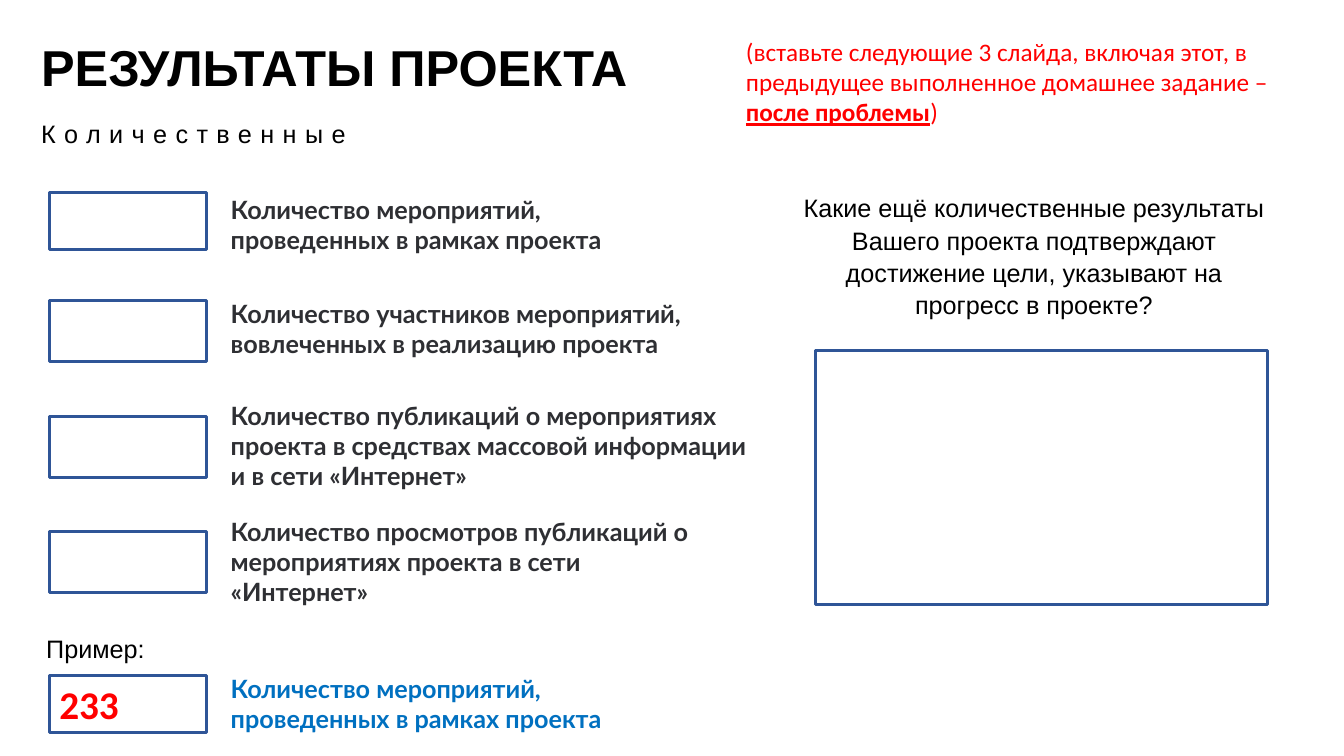
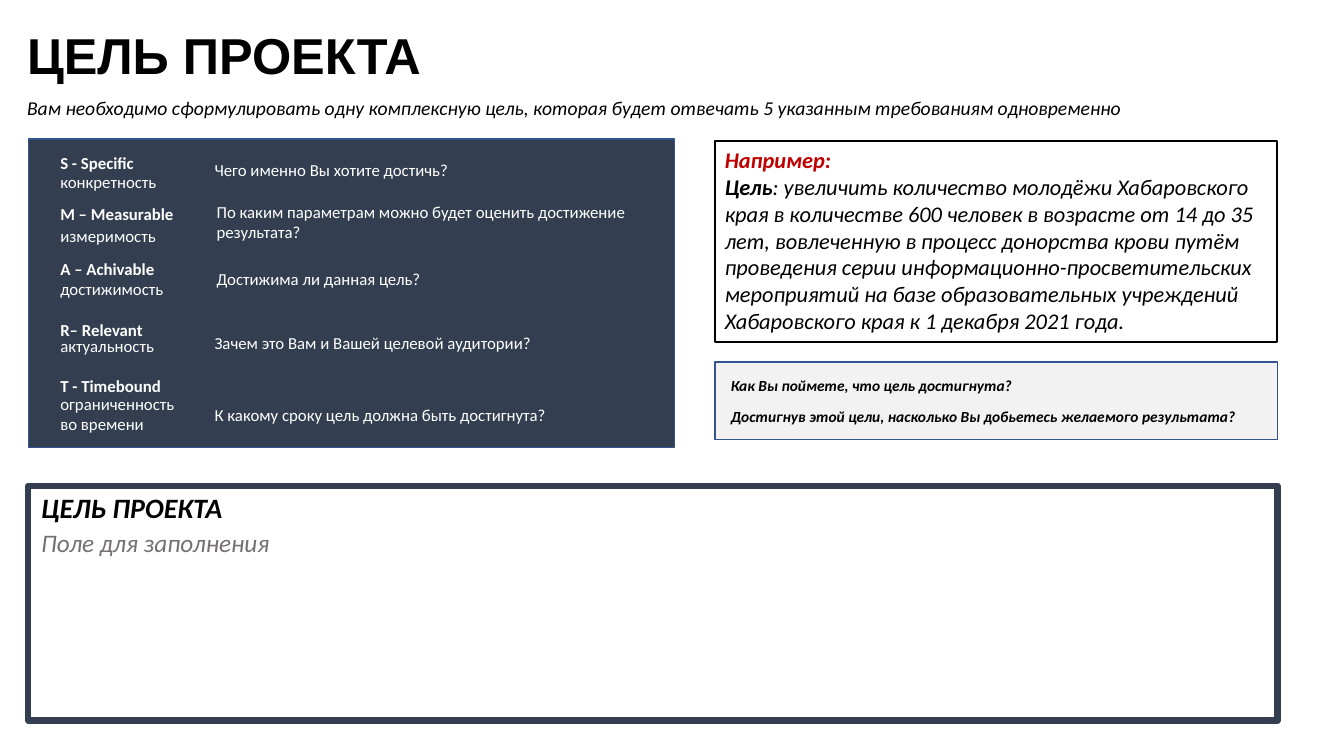
from dataclasses import dataclass
from typing import Any, NamedTuple, Optional

from pptx import Presentation
from pptx.dml.color import RGBColor
from pptx.enum.shapes import MSO_SHAPE
from pptx.enum.text import MSO_ANCHOR, PP_ALIGN
from pptx.util import Inches, Pt

RECTANGLE = MSO_SHAPE.RECTANGLE
TOP = MSO_ANCHOR.TOP
LEFT = PP_ALIGN.LEFT
CENTER = PP_ALIGN.CENTER

BLACK = RGBColor(0x00, 0x00, 0x00)
WHITE = RGBColor(0xFF, 0xFF, 0xFF)
RED = RGBColor(0xFF, 0x00, 0x00)
DARK_RED = RGBColor(0xC0, 0x00, 0x00)
CHARCOAL = RGBColor(0x2E, 0x2F, 0x33)
SKY_BLUE = RGBColor(0x00, 0x70, 0xC0)
FIELD_BLUE = RGBColor(0x2F, 0x55, 0x97)
PANEL_BLUE = RGBColor(0x32, 0x54, 0x91)
SLATE = RGBColor(0x33, 0x3F, 0x50)
PALE_GRAY = RGBColor(0xF2, 0xF2, 0xF2)
HINT_GRAY = RGBColor(0x76, 0x71, 0x71)


class Box(NamedTuple):
    left: float
    top: float
    width: float
    height: float


@dataclass(frozen=True)
class Style:
    size: float
    font: str
    color: RGBColor
    bold: bool = False
    italic: bool = False
    underline: bool = False
    tracking: int = 0


class Span(NamedTuple):
    text: str
    style: Style


Lines = list[list[Span]]


class Indicator(NamedTuple):
    text: str
    text_box: Box
    field_top: float
    field_height: float


class Criterion(NamedTuple):
    term: str
    term_top: float
    meaning: str
    meaning_top: float
    question: str
    question_left: float
    question_top: float


TITLE = Style(36, "Arial", BLACK, bold=True)
BODY = Style(18, "Arial", BLACK)
TRACKED = Style(18, "Arial", BLACK, tracking=6)
INDICATOR = Style(18, "Lato", CHARCOAL, bold=True)
INDICATOR_EXAMPLE = Style(18, "Lato", SKY_BLUE, bold=True)
NUMBER_EXAMPLE = Style(28, "Calibri", RED, bold=True)
NOTE = Style(18, "Calibri", RED)
NOTE_STRONG = Style(18, "Calibri", RED, bold=True, underline=True)
LEAD = Style(14, "Calibri", BLACK, italic=True)
TERM = Style(12, "Calibri", WHITE, bold=True)
CRITERION = Style(12, "Calibri", WHITE)
CHECK = Style(11, "Calibri", BLACK, bold=True, italic=True)
SAMPLE = Style(16, "Calibri", BLACK, italic=True)
SAMPLE_STRONG = Style(16, "Calibri", BLACK, bold=True, italic=True)
SAMPLE_HEADING = Style(16, "Calibri", DARK_RED, bold=True, italic=True)
GOAL_HEADING = Style(20, "Calibri", BLACK, bold=True, italic=True)
GOAL_HINT = Style(18, "Calibri", HINT_GRAY, italic=True)

LOOSE = {"line_spacing": 1.07, "space_after": Pt(8)}

FIELD_LEFT, FIELD_WIDTH = 0.49, 1.56
LABEL_LEFT = 2.19
EVENTS = "Количество мероприятий, проведенных в рамках проекта"

INDICATORS = [
    Indicator(EVENTS, Box(LABEL_LEFT, 1.88, 4.58, 0.71), 1.91, 0.57),
    Indicator("Количество участников мероприятий, вовлеченных в реализацию проекта",
              Box(LABEL_LEFT, 2.91, 5.11, 0.71), 2.98, 0.61),
    Indicator("Количество публикаций о мероприятиях проекта в средствах массовой "
              "информации и в сети «Интернет»",
              Box(LABEL_LEFT, 3.92, 5.42, 1.01), 4.13, 0.61),
    Indicator("Количество просмотров публикаций о мероприятиях проекта в сети «Интернет»",
              Box(LABEL_LEFT, 5.07, 4.87, 1.01), 5.27, 0.61),
]

CRITERIA = [
    Criterion("S - Specific", 1.47, "конкретность", 1.65,
              "Чего именно Вы хотите достичь?", 2.03, 1.54),
    Criterion("M – Measurable", 1.97, "измеримость", 2.19,
              "По каким параметрам можно будет оценить достижение результата?", 2.05, 1.95),
    Criterion("А – Achivable", 2.52, "достижимость", 2.72,
              "Достижима ли данная цель?", 2.05, 2.62),
    Criterion("R– Relevant", 3.12, "актуальность", 3.28,
              "Зачем это Вам и Вашей целевой аудитории?", 2.03, 3.25),
    Criterion("T - Timebound", 3.68, "ограниченность\nво времени", 3.86,
              "К какому сроку цель должна быть достигнута?", 2.03, 3.97),
]


def plain(text: str, style: Style) -> Lines:
    return [[Span(line, style)] for line in text.split("\n")]


def set_values(target: Any, values: dict[str, Any]) -> None:
    for name, value in values.items():
        setattr(target, name, value)


def write(shape: Any, lines: Lines, paragraph_format: Optional[dict[str, Any]] = None) -> None:
    frame = shape.text_frame
    set_values(frame, {"word_wrap": True, "vertical_anchor": TOP})
    for index, line in enumerate(lines):
        paragraph = frame.add_paragraph() if index else frame.paragraphs[0]
        set_values(paragraph, {"alignment": LEFT, **(paragraph_format or {})})
        for text, style in line:
            run = paragraph.add_run()
            run.text = text
            set_values(run.font, {
                "size": Pt(style.size),
                "name": style.font,
                "bold": style.bold,
                "italic": style.italic,
                "underline": style.underline,
            })
            run.font.color.rgb = style.color
            if style.tracking:
                run.font._element.set("spc", str(style.tracking * 100))


def add_text(slide: Any, box: Box, lines: Lines,
             paragraph_format: Optional[dict[str, Any]] = None) -> None:
    write(slide.shapes.add_textbox(*map(Inches, box)), lines, paragraph_format)


def add_panel(slide: Any, box: Box, line_color: RGBColor, line_width: float,
              fill: Optional[RGBColor] = None) -> Any:
    shape = slide.shapes.add_shape(RECTANGLE, *map(Inches, box))
    shape.shadow.inherit = False
    shape.line.color.rgb = line_color
    shape.line.width = Pt(line_width)
    if fill is None:
        shape.fill.background()
    else:
        shape.fill.solid()
        shape.fill.fore_color.rgb = fill
    return shape


def add_field(slide: Any, top: float, height: float) -> Any:
    return add_panel(slide, Box(FIELD_LEFT, top, FIELD_WIDTH, height), FIELD_BLUE, 2.25)


def add_titled_slide(presentation: Any, title: str, left: float, top: float) -> Any:
    slide = presentation.slides.add_slide(presentation.slide_layouts[6])
    add_text(slide, Box(left, top, 7.53, 0.71), plain(title, TITLE))
    return slide


def build_results(presentation: Any) -> None:
    slide = add_titled_slide(presentation, "РЕЗУЛЬТАТЫ ПРОЕКТА", 0.31, 0.31)
    add_text(slide, Box(0.31, 1.12, 6.67, 0.4), plain("Количественные", TRACKED))
    add_text(slide, Box(7.3, 0.31, 5.73, 1.01), [[
        Span("(вставьте следующие 3 слайда, включая этот, в предыдущее "
             "выполненное домашнее задание – ", NOTE),
        Span("после проблемы", NOTE_STRONG),
        Span(")", NOTE),
    ]])

    for indicator in INDICATORS:
        add_field(slide, indicator.field_top, indicator.field_height)
        add_text(slide, indicator.text_box, plain(indicator.text, INDICATOR))

    add_text(slide, Box(7.85, 1.84, 4.81, 1.37), plain(
        "Какие ещё количественные результаты Вашего проекта подтверждают "
        "достижение цели, указывают на прогресс в проекте?", BODY),
        {**LOOSE, "alignment": CENTER})
    add_panel(slide, Box(8.09, 3.48, 4.48, 2.52), FIELD_BLUE, 2.25)

    add_text(slide, Box(0.36, 6.23, 6.57, 0.4), [[Span("Пример", BODY), Span(":", TRACKED)]])
    write(add_field(slide, 6.7, 0.57), plain("233", NUMBER_EXAMPLE))
    add_text(slide, Box(LABEL_LEFT, 6.63, 4.58, 0.71), plain(EVENTS, INDICATOR_EXAMPLE))


def build_goal(presentation: Any) -> None:
    slide = add_titled_slide(presentation, "ЦЕЛЬ ПРОЕКТА", 0.17, 0.19)
    add_text(slide, Box(0.17, 0.9, 13, 0.34), plain(
        "Вам необходимо сформулировать одну комплексную цель, которая будет "
        "отвечать 5 указанным требованиям одновременно", LEAD))

    add_panel(slide, Box(0.28, 1.38, 6.41, 3.06), PANEL_BLUE, 1, SLATE)
    for criterion in CRITERIA:
        add_text(slide, Box(0.5, criterion.term_top, 1.6, 0.3), plain(criterion.term, TERM))
        add_text(slide, Box(0.5, criterion.meaning_top, 1.5, 0.3),
                 plain(criterion.meaning, CRITERION))
        add_text(slide, Box(criterion.question_left, criterion.question_top, 4.97, 0.3),
                 plain(criterion.question, CRITERION))

    write(add_panel(slide, Box(7.09, 1.4, 5.58, 1.99), BLACK, 1.5), [
        [Span("Например:", SAMPLE_HEADING)],
        [Span("Цель", SAMPLE_STRONG),
         Span(": увеличить количество молодёжи Хабаровского края в количестве 600 человек "
              "в возрасте от 14 до 35 лет, вовлеченную в процесс донорства крови путём "
              "проведения серии информационно-просветительских мероприятий на базе "
              "образовательных учреждений Хабаровского края к 1 декабря 2021 года.", SAMPLE)],
    ])

    add_panel(slide, Box(7.09, 3.59, 5.58, 0.77), PANEL_BLUE, 1, PALE_GRAY)
    add_text(slide, Box(7.15, 3.67, 5.58, 0.6), plain(
        "Как Вы поймете, что цель достигнута?\n"
        "Достигнув этой цели, насколько Вы добьетесь желаемого результата?", CHECK), LOOSE)

    add_panel(slide, Box(0.28, 4.82, 12.39, 2.33), SLATE, 4.5)
    add_text(slide, Box(0.31, 4.82, 12.3, 0.44), plain("ЦЕЛЬ ПРОЕКТА", GOAL_HEADING))
    add_text(slide, Box(0.31, 5.18, 3.34, 0.4), plain("Поле для заполнения", GOAL_HINT))


def main() -> None:
    presentation = Presentation()
    presentation.slide_width = Inches(13.33)
    presentation.slide_height = Inches(7.5)
    build_results(presentation)
    build_goal(presentation)
    presentation.save("out.pptx")


if __name__ == "__main__":
    main()
